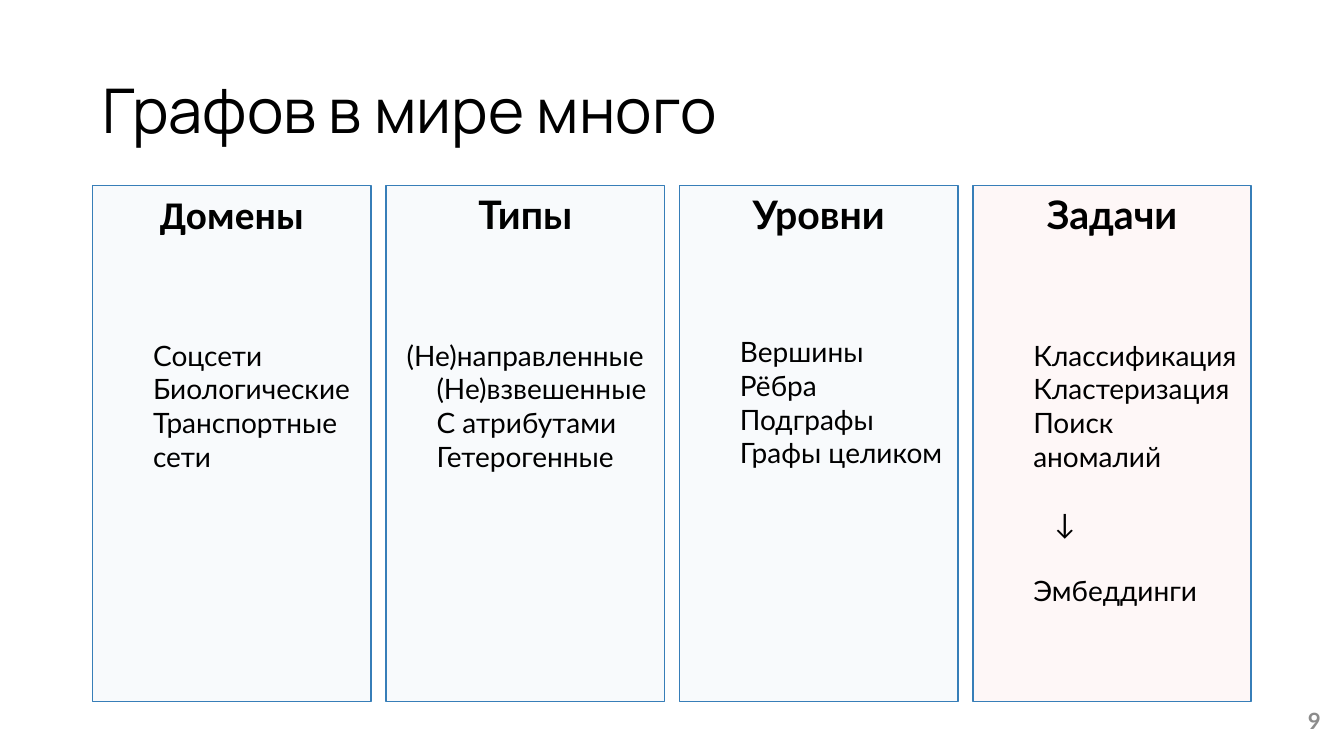
from dataclasses import dataclass

from lxml.etree import SubElement
from pptx import Presentation
from pptx.dml.color import RGBColor
from pptx.enum.shapes import MSO_SHAPE
from pptx.enum.text import MSO_ANCHOR, PP_ALIGN
from pptx.oxml.ns import qn
from pptx.slide import Slide
from pptx.text.text import _Paragraph as Paragraph
from pptx.util import Inches, Pt

BLUE, RED, BLACK, GRAY = "377EB8", "E41A1C", "000000", "8C8C8C"
LEFT, TOP, WIDTH, HEIGHT, PITCH = 0.92, 1.84, 2.76, 5.12, 2.91
LINE = 24  # height of one line of 20 pt text, in points


@dataclass
class Item:
    text: str
    indent: float = 0.5
    before: float = 0
    centered: bool = False


@dataclass
class Card:
    heading: str
    items: list[Item]
    fill: str = BLUE
    heading_font: str = "Lato"
    inset: float = 0.1
    gap: float = 3 * LINE


CARDS = [
    Card("Домены", [Item("Соцсети Биологические Транспортные сети")],
         heading_font="Calibri"),
    Card("Типы", [Item("(Не)направленные", indent=0, centered=True),
                  Item("(Не)взвешенные"), Item("С атрибутами"),
                  Item("Гетерогенные")], inset=0),
    Card("Уровни", [Item("Вершины"), Item("Рёбра"), Item("Подграфы"),
                    Item("Графы целиком")], gap=69.6),
    Card("Задачи", [Item("Классификация"), Item("Кластеризация"),
                    Item("Поиск аномалий"),
                    Item("↓", indent=0.71, before=LINE),
                    Item("Эмбеддинги", before=LINE)], fill=RED),
]


def color(value: str) -> RGBColor:
    return RGBColor.from_string(value)


def format_text(p: Paragraph, size: float, font: str = "Lato",
                rgb: str = BLACK, bold: bool = False) -> None:
    for r in p.runs:
        r.font.size = Pt(size)
        r.font.name = font
        r.font.bold = bold
        r.font.color.rgb = color(rgb)


def add_label(s: Slide, text: str, box: tuple[float, float, float, float]) -> Paragraph:
    """Add a vertically centred text box and return its paragraph."""
    tf = s.shapes.add_textbox(*map(Inches, box)).text_frame
    tf.word_wrap = True
    tf.vertical_anchor = MSO_ANCHOR.MIDDLE
    tf.text = text
    return tf.paragraphs[0]


def add_card(s: Slide, card: Card, left: float) -> None:
    sp = s.shapes.add_shape(MSO_SHAPE.ROUNDED_RECTANGLE, Inches(left),
                            Inches(TOP), Inches(WIDTH), Inches(HEIGHT))
    sp.adjustments[0] = 0
    sp.shadow.inherit = False
    sp.fill.solid()
    sp.fill.fore_color.rgb = color(card.fill)
    rgb = sp.fill._xPr.find(qn("a:solidFill")).find(qn("a:srgbClr"))
    SubElement(rgb, qn("a:alpha"), val="3000")
    sp.line.color.rgb = color(BLUE)
    sp.line.width = Pt(1)

    tf = sp.text_frame
    tf.word_wrap = True
    tf.vertical_anchor = MSO_ANCHOR.TOP
    tf.margin_left = tf.margin_right = Inches(card.inset)
    tf.text = card.heading
    p = tf.paragraphs[0]
    p.alignment = PP_ALIGN.CENTER
    p.space_after = Pt(card.gap)
    format_text(p, 28, card.heading_font, bold=True)

    for item in card.items:
        p = tf.add_paragraph()
        p.text = item.text
        p.alignment = PP_ALIGN.CENTER if item.centered else PP_ALIGN.LEFT
        p.space_before = Pt(item.before)
        pPr = p._p.get_or_add_pPr()
        pPr.set("marL", str(Inches(item.indent)))
        pPr.set("indent", "0")
        format_text(p, 20)


def main() -> None:
    prs = Presentation()
    prs.slide_width, prs.slide_height = Inches(13.33), Inches(7.5)
    s = prs.slides.add_slide(prs.slide_layouts[6])

    title = add_label(s, "Графов в мире много", (LEFT, 0.4, 11.5, 1.45))
    title.line_spacing = 0.9
    format_text(title, 44, "Manrope")

    number = add_label(s, "9", (10.2, 6.95, 3, 0.4))
    number.alignment = PP_ALIGN.RIGHT
    format_text(number, 16, rgb=GRAY, bold=True)

    for i, card in enumerate(CARDS):
        add_card(s, card, LEFT + i * PITCH)

    prs.save("out.pptx")


if __name__ == "__main__":
    main()
